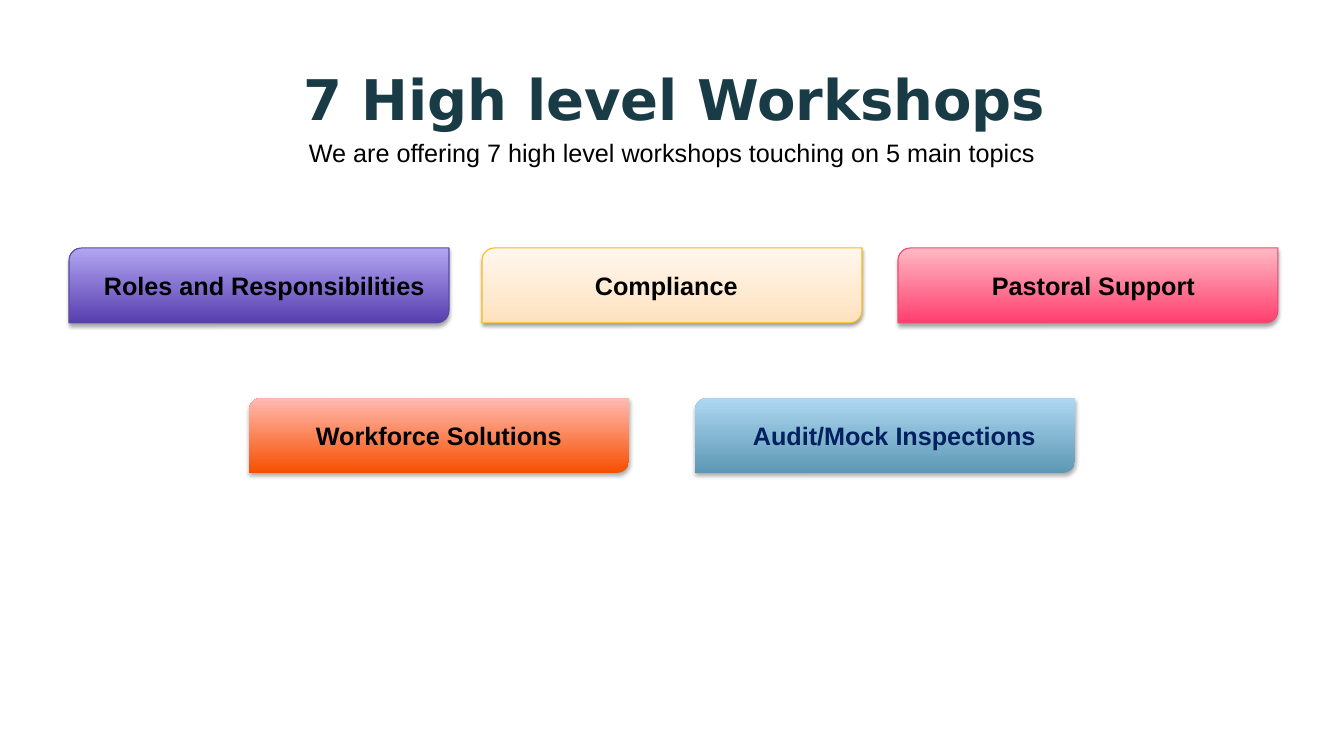
import lxml.etree
import pptx
import pptx.dml.color
import pptx.enum.shapes
import pptx.enum.text
import pptx.oxml.ns
import pptx.util

TITLE = ("7 High level Workshops", (170, 35, 1009, 126))
SUBTITLE = ("We are offering 7 high level workshops touching on 5 main topics", (299, 132, 750, 40))

TOPIC_ROWS = [
    (248, [
        {"name": "Roles and Responsibilities", "left": 69, "label": (94, 346), "style": "purple"},
        {"name": "Compliance", "left": 482, "label": (585, 179), "style": "cream"},
        {"name": "Pastoral Support", "left": 898, "label": (982, 230), "style": "pink"},
    ]),
    (398, [
        {"name": "Workforce Solutions", "left": 249, "label": (306, 266), "style": "orange"},
        {"name": "Audit/Mock Inspections", "left": 695, "label": (743, 309), "style": "blue"},
    ]),
]

THEME = {
    "title": {"font": "DejaVu Sans", "size": 40, "color": "193B45", "bold": True},
    "subtitle": {"font": "Arial", "size": 18, "color": "000000", "bold": False},
    "label": {"font": "Arial", "size": 18, "color": "000000", "bold": True},
    "purple": {"stops": [(0, "573EAF"), (100, "B2A6F2")], "line": "5B47A1"},
    "cream": {"stops": [(0, "FFE1BC"), (35, "FFE9D0"), (100, "FFF7ED")], "line": "FCBB15",
              "shadow": (38, 1.6)},
    "pink": {"stops": [(0, "FF3E6E"), (100, "FFB9C4")], "line": "EA4C73"},
    "orange": {"stops": [(0, "F64F00"), (100, "FFBBB2")]},
    "blue": {"stops": [(0, "5C98B4"), (100, "AED8F2")], "text": "002060"},
    "shadow": (35, 1.8),
    "shadow_color": "000000",
    "shadow_blur": 3.1,
    "line_width": 0.75,
}

SLIDE_SIZE = (1344, 756)
CARD_SIZE = (380, 75)
LABEL_HEIGHT = 40
EMU_PER_PX = 914400 / 100.8


def px(length):
    return pptx.util.Emu(round(length * EMU_PER_PX))


def rgb(color):
    return pptx.dml.color.RGBColor.from_string(color)


def add_element(parent, tag, **attributes):
    return lxml.etree.SubElement(parent, pptx.oxml.ns.qn(tag), attributes)


def add_text(slide, text, box, style, centered=False):
    shape = slide.shapes.add_textbox(*map(px, box))
    frame = shape.text_frame
    frame.text = text
    frame.word_wrap = True
    if centered:
        frame.vertical_anchor = pptx.enum.text.MSO_ANCHOR.MIDDLE
        frame.paragraphs[0].alignment = pptx.enum.text.PP_ALIGN.CENTER
    font = frame.paragraphs[0].runs[0].font
    font.name = style["font"]
    font.size = pptx.util.Pt(style["size"])
    font.bold = style["bold"]
    font.color.rgb = rgb(style["color"])


def set_gradient(shape, stops):
    shape.fill.gradient()
    shape.fill.gradient_angle = 90
    stop_list = shape.element.spPr.find(".//" + pptx.oxml.ns.qn("a:gsLst"))
    for stop in list(stop_list):
        stop_list.remove(stop)
    for position, color in stops:
        stop = add_element(stop_list, "a:gs", pos=str(position * 1000))
        add_element(stop, "a:srgbClr", val=color)


def set_shadow(shape, opacity, distance):
    shape.shadow.inherit = False
    effects = shape.element.spPr.find(pptx.oxml.ns.qn("a:effectLst"))
    shadow = add_element(
        effects, "a:outerShdw",
        blurRad=str(pptx.util.Pt(THEME["shadow_blur"])),
        dist=str(pptx.util.Pt(distance)), dir="5400000", rotWithShape="0",
    )
    color = add_element(shadow, "a:srgbClr", val=THEME["shadow_color"])
    add_element(color, "a:alpha", val=str(opacity * 1000))


def add_card(slide, left, top, style):
    shape = slide.shapes.add_shape(
        pptx.enum.shapes.MSO_SHAPE.ROUND_2_DIAG_RECTANGLE,
        px(left), px(top), *map(px, CARD_SIZE),
    )
    set_gradient(shape, style["stops"])
    if "line" in style:
        shape.line.color.rgb = rgb(style["line"])
        shape.line.width = pptx.util.Pt(THEME["line_width"])
    else:
        shape.line.fill.background()
    set_shadow(shape, *style.get("shadow", THEME["shadow"]))


def main():
    presentation = pptx.Presentation()
    presentation.slide_width, presentation.slide_height = map(px, SLIDE_SIZE)
    slide = presentation.slides.add_slide(presentation.slide_layouts[6])
    add_text(slide, *TITLE, THEME["title"], centered=True)
    add_text(slide, *SUBTITLE, THEME["subtitle"])
    for top, topics in TOPIC_ROWS:
        label_top = top + (CARD_SIZE[1] - LABEL_HEIGHT) // 2
        for topic in topics:
            style = THEME[topic["style"]]
            add_card(slide, topic["left"], top, style)
            label_left, label_width = topic["label"]
            label_style = dict(THEME["label"], color=style.get("text", THEME["label"]["color"]))
            add_text(slide, topic["name"], (label_left, label_top, label_width, LABEL_HEIGHT), label_style)
    presentation.save("out.pptx")


if __name__ == "__main__":
    main()
